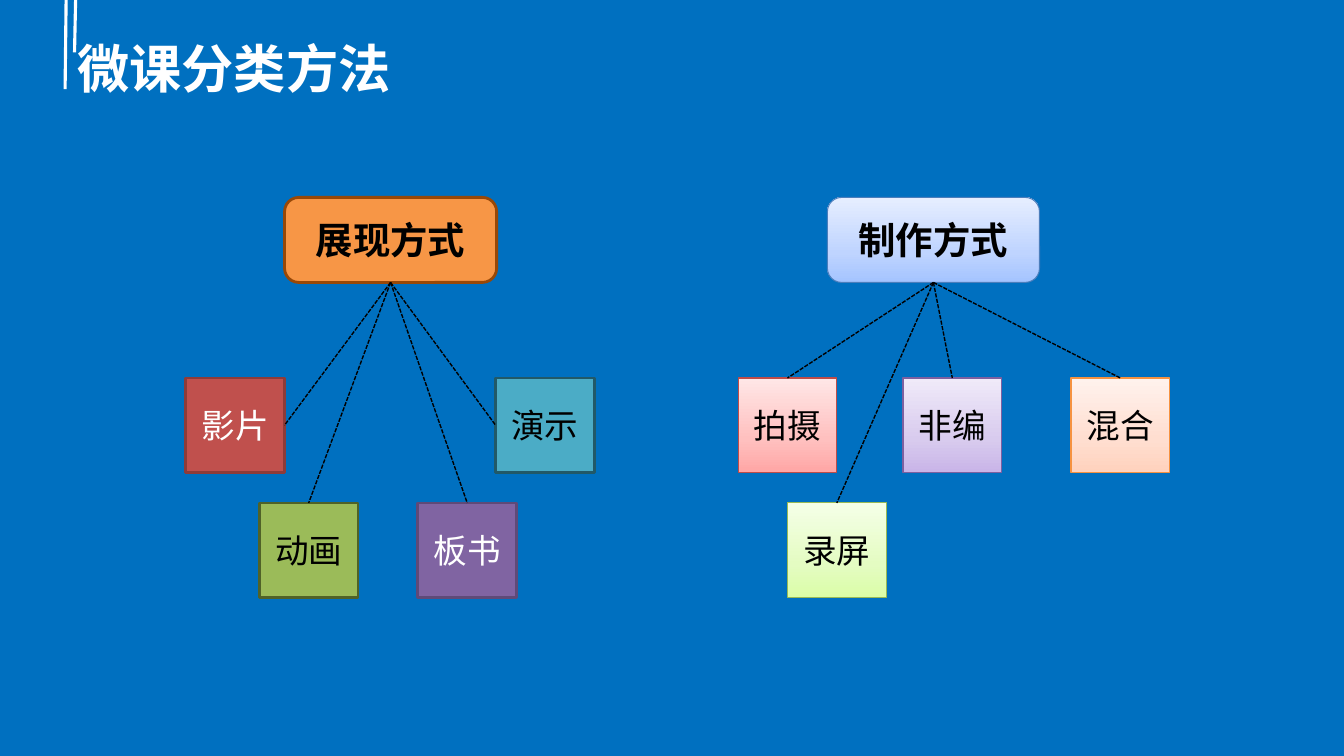
from dataclasses import dataclass

from lxml.etree import SubElement
from pptx import Presentation
from pptx.dml.color import RGBColor
from pptx.enum.dml import MSO_LINE
from pptx.enum.shapes import MSO_CONNECTOR, MSO_SHAPE
from pptx.enum.text import MSO_ANCHOR, PP_ALIGN
from pptx.oxml.ns import qn
from pptx.shapes.autoshape import Shape
from pptx.shapes.connector import Connector
from pptx.slide import Slide
from pptx.text.text import TextFrame
from pptx.util import Emu, Pt

FONT = "Noto Sans CJK SC"
TOP, LEFT, BOTTOM, RIGHT = range(4)  # connection sites of a box
ROOT_TOP, ROOT_SIZE = 188, (202, 81)
UPPER_ROW, LOWER_ROW, CARD_SIZE = 360, 479, (94, 90)
GRADIENT_STOPS = (0, 35, 100)


@dataclass(frozen=True)
class Box:
    text: str
    left: int
    top: int
    fills: tuple[str, ...]  # one colour is solid, three make a gradient
    line: str
    text_color: str = "000000"
    site: int = TOP


@dataclass(frozen=True)
class Tree:
    root: Box
    cards: tuple[Box, ...]
    line_width: float


TREES = (
    Tree(
        Box("展现方式", 271, ROOT_TOP, ("F79646",), "984807"),
        (
            Box("影片", 177, UPPER_ROW, ("C0504D",), "8E3B39", "FFFFFF", RIGHT),
            Box("动画", 247, LOWER_ROW, ("9BBB59",), "4F6228"),
            Box("板书", 398, LOWER_ROW, ("8064A2",), "5F4A78", "FFFFFF"),
            Box("演示", 472, UPPER_ROW, ("4BACC6",), "215968", site=LEFT),
        ),
        2,
    ),
    Tree(
        Box("制作方式", 788, ROOT_TOP, ("A4C4FF", "BFD4FF", "E6EEFF"), "4B7EBC"),
        (
            Box("拍摄", 703, UPPER_ROW, ("FFA6A5", "FFC0BF", "FFE7E7"), "BF4C48"),
            Box("录屏", 750, LOWER_ROW, ("DAFDA7", "E4FCC2", "F5FFE7"), "98B955"),
            Box("非编", 860, UPPER_ROW, ("C9B5E8", "D8CBEE", "F0EAF9"), "7D60A0"),
            Box("混合", 1020, UPPER_ROW, ("FFD2BD", "FFDED0", "FFF2ED"), "F69240"),
        ),
        0.75,
    ),
)


def px(length: int) -> Emu:
    return Emu(length * 9525)


def rgb(color: str) -> RGBColor:
    return RGBColor.from_string(color)


def write_text(frame: TextFrame, text: str, size: float, color: str,
               bold: bool, align: PP_ALIGN) -> None:
    frame.text = text
    frame.word_wrap = True
    frame.vertical_anchor = MSO_ANCHOR.MIDDLE
    paragraph = frame.paragraphs[0]
    paragraph.alignment = align
    run = paragraph.runs[0]
    run.font.size, run.font.bold, run.font.name = Pt(size), bold, FONT
    run.font.color.rgb = rgb(color)
    SubElement(run.font._element, qn("a:ea"), typeface=FONT)


def fill_shape(shape: Shape, colors: tuple[str, ...]) -> None:
    if len(colors) == 1:
        shape.fill.solid()
        shape.fill.fore_color.rgb = rgb(colors[0])
        return
    shape.fill.gradient()
    shape.fill.gradient_angle = 90
    stops = shape._element.spPr.find(qn("a:gradFill")).find(qn("a:gsLst"))
    stops.clear()
    for position, color in zip(GRADIENT_STOPS, colors):
        stop = SubElement(stops, qn("a:gs"), pos=str(position * 1000))
        SubElement(stop, qn("a:srgbClr"), val=color)


def add_box(slide: Slide, box: Box, line_width: float, is_root: bool) -> Shape:
    kind = MSO_SHAPE.ROUNDED_RECTANGLE if is_root else MSO_SHAPE.RECTANGLE
    width, height = ROOT_SIZE if is_root else CARD_SIZE
    shape = slide.shapes.add_shape(
        kind, px(box.left), px(box.top), px(width), px(height))
    shape.shadow.inherit = False
    fill_shape(shape, box.fills)
    shape.line.color.rgb = rgb(box.line)
    shape.line.width = Pt(line_width)
    write_text(shape.text_frame, box.text, 26.7 if is_root else 24,
               box.text_color, is_root, PP_ALIGN.CENTER)
    return shape


def add_line(slide: Slide, start: tuple[int, int], end: tuple[int, int],
             color: str, width: float) -> Connector:
    line = slide.shapes.add_connector(
        MSO_CONNECTOR.STRAIGHT, *map(px, start + end))
    line.line.color.rgb = rgb(color)
    line.line.width = Pt(width)
    SubElement(line._element.spPr, qn("a:effectLst"))
    return line


def add_tree(slide: Slide, tree: Tree) -> None:
    root = add_box(slide, tree.root, tree.line_width, True)
    for card in tree.cards:
        shape = add_box(slide, card, tree.line_width, False)
        branch = add_line(slide, (0, 0), (0, 0), "000000", 1)
        branch.line.dash_style = MSO_LINE.SQUARE_DOT
        branch.begin_connect(root, BOTTOM)
        branch.end_connect(shape, card.site)


def main() -> None:
    presentation = Presentation()
    presentation.slide_width, presentation.slide_height = px(1280), px(720)
    slide = presentation.slides.add_slide(presentation.slide_layouts[5])
    slide.background.fill.solid()
    slide.background.fill.fore_color.rgb = rgb("0070C0")

    # Title with its two hanging lines
    title = slide.shapes.title
    title.left, title.top, title.width, title.height = map(px, (64, 29, 1152, 71))
    write_text(title.text_frame, "微课分类方法", 37.3, "FFFFFF", True, PP_ALIGN.LEFT)
    add_line(slide, (63, 0), (62, 85), "FFFFFF", 2.25)
    add_line(slide, (72, 0), (71, 50), "FFFFFF", 2.25)

    # Classification trees
    for tree in TREES:
        add_tree(slide, tree)

    presentation.save("out.pptx")


if __name__ == "__main__":
    main()
